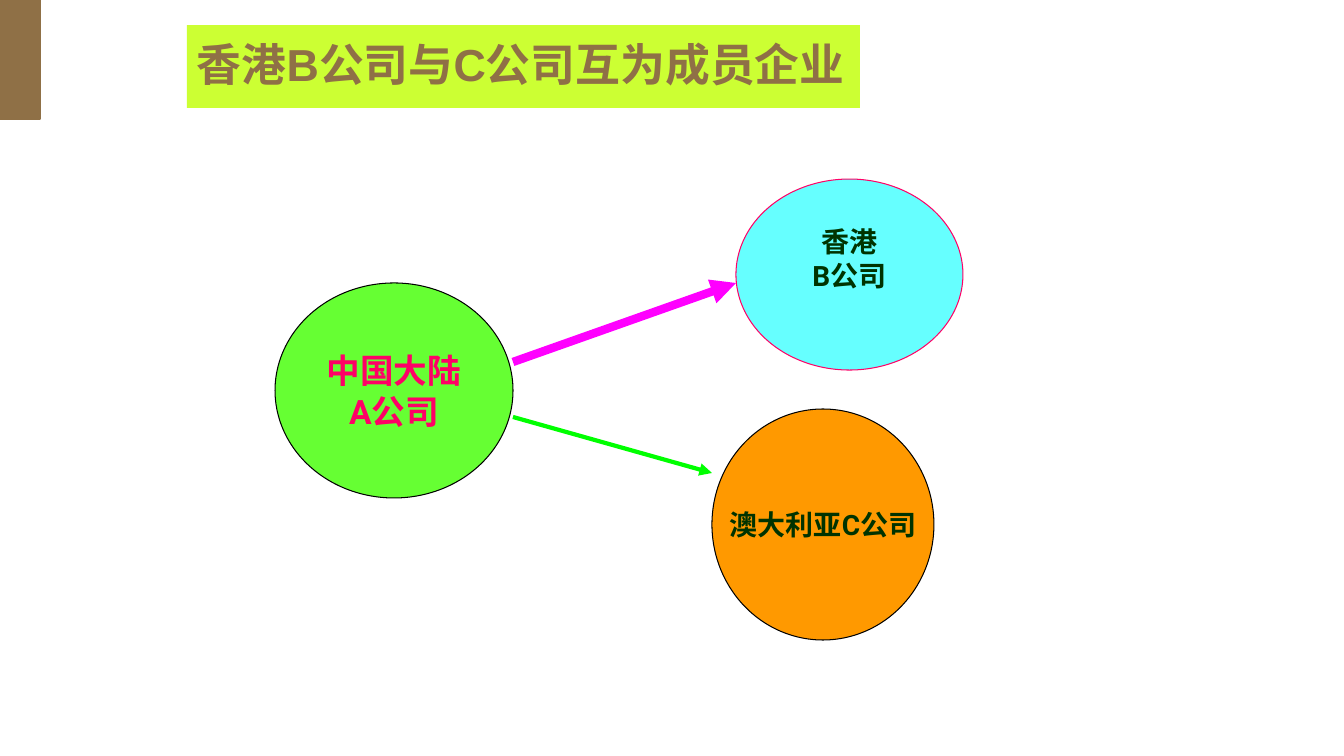
from lxml import etree
from pptx import Presentation
from pptx.dml.color import RGBColor
from pptx.enum.shapes import MSO_CONNECTOR, MSO_SHAPE
from pptx.enum.text import MSO_ANCHOR, PP_ALIGN
from pptx.oxml.ns import qn
from pptx.util import Pt

EMU_PER_PX = 914400 / 100.8
RECTANGLE = MSO_SHAPE.RECTANGLE
ELLIPSE = MSO_SHAPE.OVAL
STRAIGHT = MSO_CONNECTOR.STRAIGHT
MIDDLE = MSO_ANCHOR.MIDDLE
CENTER = PP_ALIGN.CENTER
LEFT = PP_ALIGN.LEFT


def px(length):
    return round(length * EMU_PER_PX)


def color(hex_code):
    return RGBColor.from_string(hex_code)


def add_filled(slide, preset, box, fill, outline=None, weight=0.75):
    filled = slide.shapes.add_shape(preset, *map(px, box))
    filled.shadow.inherit = False
    filled.fill.solid()
    filled.fill.fore_color.rgb = color(fill)
    if outline:
        filled.line.color.rgb = color(outline)
        filled.line.width = Pt(weight)
    else:
        filled.line.fill.background()
    return filled


def write_lines(frame, lines, font_name, size, ink, align, spacing=1.0):
    frame.vertical_anchor = MIDDLE
    for index, line in enumerate(lines):
        paragraph = frame.paragraphs[0] if index == 0 else frame.add_paragraph()
        paragraph.alignment = align
        paragraph.line_spacing = spacing
        run = paragraph.add_run()
        run.text = line
        run.font.name = font_name
        run.font.size = Pt(size)
        run.font.bold = True
        run.font.color.rgb = color(ink)


def add_heading(slide, box, heading):
    banner = add_filled(slide, RECTANGLE, box, "CCFF33")
    banner.text_frame.word_wrap = True
    write_lines(banner.text_frame, [heading], "Arial", 32, "8F7046", LEFT, 0.9)


def add_company(slide, box, lines, fill, outline, size, ink, lift=0):
    company = add_filled(slide, ELLIPSE, box, fill, outline)
    frame = company.text_frame
    frame.word_wrap = False
    frame.margin_bottom += px(2 * lift)
    write_lines(frame, lines, "Roboto", size, ink, CENTER)


def add_investment(slide, start, end, ink, weight):
    arrow = slide.shapes.add_connector(STRAIGHT, *map(px, start + end))
    arrow.line.color.rgb = color(ink)
    arrow.line.width = Pt(weight)
    etree.SubElement(arrow.line._get_or_add_ln(), qn("a:tailEnd"), type="triangle")
    etree.SubElement(arrow._element.spPr, qn("a:effectLst"))


def add_group_structure(slide, left, top):
    def place(x, y, *size):
        return (left + x, top + y, *size)

    add_company(slide, place(0, 104, 238, 215), ["中国大陆", "A公司"],
                "66FF33", "000000", 24, "FF0066")
    add_company(slide, place(461, 0, 227, 191), ["香港", "B公司"],
                "66FFFF", "FF0066", 20, "003300", lift=16)
    add_company(slide, place(437, 230, 222, 231), ["澳大利亚C公司"],
                "FF9900", "000000", 20, "003300")
    add_investment(slide, place(238, 183), place(461, 104), "FF00FF", 6)
    add_investment(slide, place(238, 238), place(437, 294), "00FF00", 3)


def main():
    deck = Presentation()
    deck.slide_width = px(1344)
    deck.slide_height = px(756)
    slide = deck.slides.add_slide(deck.slide_layouts[6])
    add_filled(slide, RECTANGLE, (-1, 0, 41, 119), "8F7046", "8F7046", 1)
    add_heading(slide, (187, 25, 673, 83), "香港B公司与C公司互为成员企业")
    add_group_structure(slide, 275, 179)
    deck.save("out.pptx")


if __name__ == "__main__":
    main()
